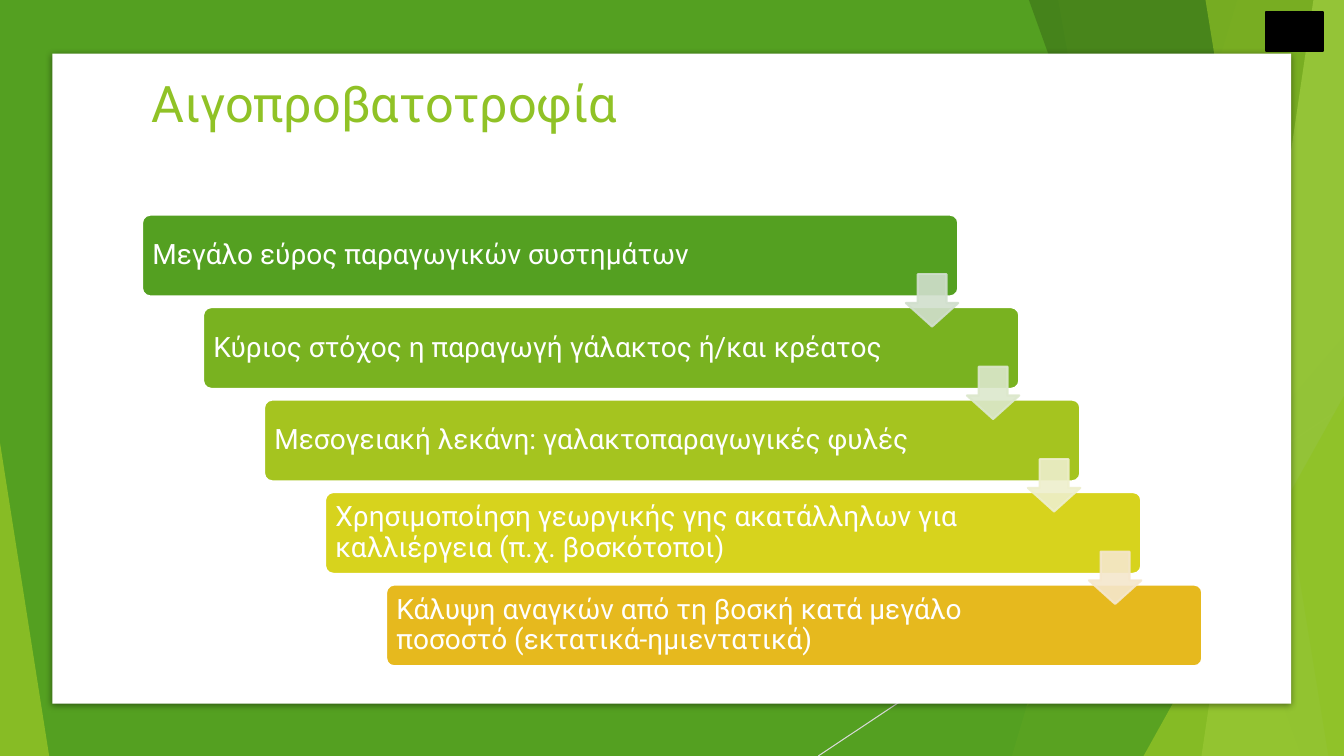
import lxml.etree
import pptx
import pptx.dml.color
import pptx.enum.shapes
import pptx.enum.text
import pptx.oxml.ns
import pptx.util
from pptx.util import Cm

SHAPES = pptx.enum.shapes.MSO_SHAPE
ANCHORS = pptx.enum.text.MSO_ANCHOR
PAGE_WIDTH, PAGE_HEIGHT = 33.87, 19.05
FONT = "Roboto"

FACETS_BELOW = [(31.19, 25.5, "90C226", 30), (26.67, 30.05, "90C226", 20)]
FACETS_ABOVE = [
    (25.93, 32.79, "3F7819", 70),
    (33.1, 30.28, "C0E474", 70),
    (30.38, 33.48, "90C226", 65),
]
STEPS = [
    ("Μεγάλο εύρος παραγωγικών συστημάτων", "54A021", "D1DFCD"),
    ("Κύριος στόχος η παραγωγή γάλακτος ή/και κρέατος", "79B220", "DCE8CC"),
    ("Μεσογειακή λεκάνη: γαλακτοπαραγωγικές φυλές", "A5C41F", "EEEFCC"),
    ("Χρησιμοποίηση γεωργικής γης ακατάλληλων για καλλιέργεια (π.χ. βοσκότοποι)",
     "D7D31D", "F5E7CD"),
    ("Κάλυψη αναγκών από τη βοσκή κατά μεγάλο ποσοστό (εκτατικά-ημιεντατικά)",
     "E6B91E", None),
]


def color(value):
    return pptx.dml.color.RGBColor.from_string(value)


def qualified(tag):
    return pptx.oxml.ns.qn(tag)


def add_child(parent, tag, **attributes):
    texts = {name: str(value) for name, value in attributes.items()}
    return lxml.etree.SubElement(parent, qualified(tag), texts)


def paint(shape, fill, line=None, opacity=100):
    shape.shadow.inherit = False
    shape.fill.solid()
    shape.fill.fore_color.rgb = color(fill)
    if line:
        shape.line.color.rgb = color(line)
        shape.line.width = pptx.util.Pt(1.5)
    else:
        shape.line.fill.background()
    if opacity < 100:
        for tone in list(shape.element.iter(qualified("a:srgbClr"))):
            add_child(tone, "a:alpha", val=opacity * 1000)


def add_block(page, kind, box, fill, line=None, opacity=100, adjustments=()):
    shape = page.shapes.add_shape(kind, *map(Cm, box))
    for index, value in enumerate(adjustments):
        shape.adjustments[index] = value
    paint(shape, fill, line, opacity)
    return shape


def add_text(page, box, text, size, tone, anchor, inset=None, spacing=None):
    frame = page.shapes.add_textbox(*map(Cm, box)).text_frame
    frame.word_wrap = True
    frame.vertical_anchor = anchor
    if inset is not None:
        frame.margin_left = frame.margin_right = Cm(inset)
        frame.margin_top = frame.margin_bottom = Cm(inset)
    para = frame.paragraphs[0]
    if spacing:
        para.line_spacing = spacing
    span = para.add_run()
    span.text = text
    span.font.name = FONT
    span.font.size = pptx.util.Pt(size)
    span.font.color.rgb = color(tone)


def add_facets(page, box, facets):
    left, top, width, height = box
    right, bottom = left + width, top + height
    for top_x, bottom_x, fill, opacity in facets:
        builder = page.shapes.build_freeform(Cm(left + top_x), Cm(top))
        corners = [(right, top), (right, bottom), (left + bottom_x, bottom)]
        builder.add_line_segments([(Cm(x), Cm(y)) for x, y in corners])
        paint(builder.convert_to_shape(), fill, opacity=opacity)


def add_corner_triangle(page, box, width, height, apex, fill, opacity):
    left, top, box_width, box_height = box
    x = left + apex * (box_width - width)
    y = top + box_height - height
    add_block(page, SHAPES.ISOSCELES_TRIANGLE, (x, y, width, height), fill,
              opacity=opacity, adjustments=[apex])


def add_backdrop(page, box):
    left, top, width, height = box
    add_block(page, SHAPES.RECTANGLE, box, "54A021")
    ray = page.shapes.add_connector(
        pptx.enum.shapes.MSO_CONNECTOR.STRAIGHT,
        Cm(left + width), Cm(top + 10.24), Cm(left + 20.62), Cm(top + height))
    ray.line.color.rgb = color("D9D9D9")
    ray.line.width = pptx.util.Pt(0.75)
    add_child(ray.element.spPr, "a:effectLst")
    add_facets(page, box, FACETS_BELOW)
    add_corner_triangle(page, box, 9.05, 10.59, 1, "54A021", 72)
    add_facets(page, box, FACETS_ABOVE)
    add_corner_triangle(page, box, 5.05, 9.07, 1, "90C226", 80)
    add_corner_triangle(page, box, 1.24, 7.9, 0, "90C226", 85)


def add_panel(page, box):
    panel = add_block(page, SHAPES.RECTANGLE, box, "FFFFFF")
    effects = panel.element.spPr.find(qualified("a:effectLst"))
    shadow = add_child(effects, "a:outerShdw", blurRad=pptx.util.Pt(5),
                       dist=pptx.util.Pt(1.4), dir=5400000, rotWithShape=0)
    tone = add_child(shadow, "a:srgbClr", val="000000")
    add_child(tone, "a:alpha", val=43000)


def add_cascade(page, box):
    left, top, width, height = box
    bar_width, bar_height, arrow_size, pad = 20.57, 2.06, 1.32, 0.06
    step_x = (width - bar_width) / (len(STEPS) - 1)
    step_y = (height - bar_height) / (len(STEPS) - 1)
    spots = [(left + i * step_x, top + i * step_y) for i in range(len(STEPS))]
    for (x, y), (text, fill, _) in zip(spots, STEPS):
        add_block(page, SHAPES.ROUNDED_RECTANGLE, (x, y, bar_width, bar_height),
                  fill, "FFFFFF", adjustments=[0.1])
        add_text(page, (x + pad, y + pad, 17.58, bar_height - 2 * pad), text,
                 20, "FFFFFF", ANCHORS.MIDDLE, inset=0.2, spacing=0.9)
    for (x, y), (_, _, tone) in zip(spots, STEPS):
        if tone:
            add_block(page, SHAPES.DOWN_ARROW,
                      (x + bar_width - arrow_size, y + 1.5, arrow_size, arrow_size),
                      tone, tone, 90, [0.55, 0.45])


def main():
    deck = pptx.Presentation()
    deck.slide_width, deck.slide_height = Cm(PAGE_WIDTH), Cm(PAGE_HEIGHT)
    page = deck.slides.add_slide(deck.slide_layouts[6])
    add_backdrop(page, (0, 0, PAGE_WIDTH, PAGE_HEIGHT))
    add_panel(page, (1.32, 1.35, 31.22, 16.38))
    add_text(page, (3.58, 1.7, 28.32, 3.05), "Αιγοπροβατοτροφία", 36, "90C226",
             ANCHORS.TOP)
    add_cascade(page, (3.58, 5.41, 26.72, 11.38))
    add_block(page, SHAPES.RECTANGLE, (31.9, 0.3, 1.45, 0.99), "000000", "000000")
    deck.save("out.pptx")


if __name__ == "__main__":
    main()
